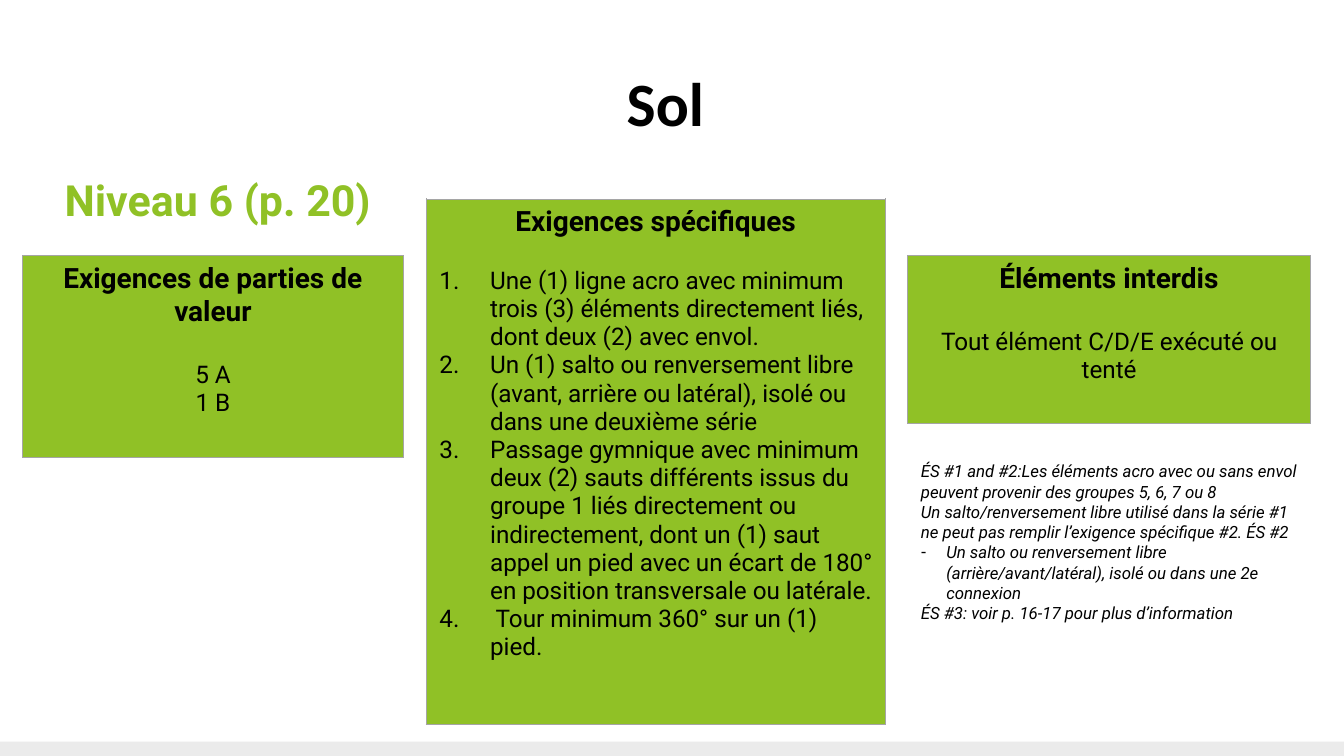
"""Build the floor exercise slide with the level 6 requirements."""
from dataclasses import dataclass

from lxml.etree import SubElement
from pptx import Presentation
from pptx.dml.color import RGBColor
from pptx.enum.shapes import MSO_SHAPE
from pptx.enum.text import MSO_ANCHOR, MSO_AUTO_SIZE, PP_ALIGN
from pptx.oxml import parse_xml
from pptx.oxml.ns import nsdecls, qn
from pptx.util import Cm, Pt


@dataclass(frozen=True)
class Theme:
    green: RGBColor = RGBColor.from_string("90C126")
    black: RGBColor = RGBColor.from_string("000000")
    strip: RGBColor = RGBColor.from_string("EBEBEB")
    border: str = "A5A5A5"
    title_font: str = "Calibri"
    text_font: str = "Roboto"
    title_size: int = 33
    level_size: int = 23
    heading_size: int = 15
    text_size: int = 13
    note_size: int = 9


theme = Theme()


def write_paragraph(frame, text, size, align=PP_ALIGN.LEFT, before=0, bullet=None, indent=0, **font_values):
    paragraph = frame.paragraphs[0]
    if paragraph.runs:
        paragraph = frame.add_paragraph()
    for name, value in {"alignment": align, "space_before": Pt(before), "space_after": Pt(0)}.items():
        setattr(paragraph, name, value)
    properties = paragraph._p.get_or_add_pPr()
    properties.set("marL", str(Cm(indent)))
    properties.set("indent", str(-Cm(indent)))
    tag, attributes = bullet or ("a:buNone", {})
    SubElement(properties, qn(tag), attributes)
    run = paragraph.add_run()
    run.text = text
    run.font.color.rgb = font_values.pop("color", theme.black)
    values = {"size": Pt(size), "name": theme.text_font, "bold": False, "italic": False}
    for name, value in (values | font_values).items():
        setattr(run.font, name, value)


def place(shape, left, top, width, height, **frame_values):
    for name, value in {"left": left, "top": top, "width": width, "height": height}.items():
        setattr(shape, name, Cm(value))
    for name, value in ({"word_wrap": True, "auto_size": MSO_AUTO_SIZE.NONE} | frame_values).items():
        setattr(shape.text_frame, name, value)
    return shape.text_frame


presentation = Presentation()
presentation.slide_width = Cm(25.4)
presentation.slide_height = Cm(14.29)
slide = presentation.slides.add_slide(presentation.slide_layouts[1])
title, body = slide.placeholders

strip = slide.shapes.add_shape(MSO_SHAPE.RECTANGLE, 0, Cm(14.02), Cm(25.4), Cm(0.27))
strip.shadow.inherit = False
strip.fill.solid()
strip.fill.fore_color.rgb = theme.strip
strip.line.fill.background()

no_margins = {f"margin_{side}": 0 for side in ("left", "top", "right", "bottom")}
title_frame = place(title, 0.89, 1.35, 23.37, 1.14, vertical_anchor=MSO_ANCHOR.MIDDLE, **no_margins)
write_paragraph(title_frame, "Sol", theme.title_size, PP_ALIGN.CENTER, name=theme.title_font, bold=True)

level = slide.shapes.add_textbox(0, 0, 0, 0)
level_frame = place(level, 1.22, 3.28, 23.57, 0.99, **no_margins)
write_paragraph(level_frame, "Niveau 6 (p. 20)", theme.level_size, color=theme.green, bold=True)

centered = {"align": PP_ALIGN.CENTER}
numbered = {"bullet": ("a:buAutoNum", {"type": "arabicPeriod"}), "indent": 0.96}
cards = [
    ((0.43, 4.83, 7.19, 3.81), "Exigences de parties de valeur", 17.6, centered, ["5 A", "1 B"]),
    ((8.05, 3.76, 8.69, 9.93), "Exigences spécifiques", 15.2, numbered, [
        "Une (1) ligne acro avec minimum trois (3) éléments directement liés, dont deux (2) avec envol.",
        "Un (1) salto ou renversement libre (avant, arrière ou latéral), isolé ou dans une deuxième série",
        "Passage gymnique avec minimum deux (2) sauts différents issus du groupe 1 liés directement ou "
        "indirectement, dont un (1) saut appel un pied avec un écart de 180° en position transversale "
        "ou latérale.",
        " Tour minimum 360° sur un (1) pied.",
    ]),
    ((17.15, 4.83, 7.62, 3.18), "Éléments interdis", 17.6, centered, ["Tout élément C/D/E exécuté ou tenté"]),
]
for bounds, heading, gap, paragraph_values, lines in cards:
    table = slide.shapes.add_table(1, 1, *map(Cm, bounds)).table
    table.first_row = table.horz_banding = False
    cell = table.cell(0, 0)
    cell.fill.solid()
    cell.fill.fore_color.rgb = theme.green
    for position, side in enumerate("LRTB"):
        cell._tc.get_or_add_tcPr().insert(position, parse_xml(
            f'<a:ln{side} {nsdecls("a")} w="{Pt(0.5)}"><a:solidFill>'
            f'<a:srgbClr val="{theme.border}"/></a:solidFill></a:ln{side}>'))
    write_paragraph(cell.text_frame, heading, theme.heading_size, bold=True, **centered)
    for index, line in enumerate(lines):
        before = gap if index == 0 else 0
        write_paragraph(cell.text_frame, line, theme.text_size, before=before, **paragraph_values)

dashed = {"bullet": ("a:buChar", {"char": "-"}), "indent": 0.48}
notes = [
    ("ÉS #1 and #2:Les éléments acro avec ou sans envol peuvent provenir des groupes 5, 6, 7 ou 8", {}),
    ("Un salto/renversement libre utilisé dans la série #1 ne peut pas remplir l’exigence spécifique #2. ÉS #2", {}),
    ("Un salto ou renversement libre (arrière/avant/latéral), isolé ou dans une 2e connexion", dashed),
    ("ÉS #3: voir p. 16-17 pour plus d’information", {}),
]
notes_frame = place(body, 17.15, 8.59, 7.72, 3.71)
for text, paragraph_values in notes:
    write_paragraph(notes_frame, text, theme.note_size, italic=True, **paragraph_values)

presentation.save("out.pptx")
